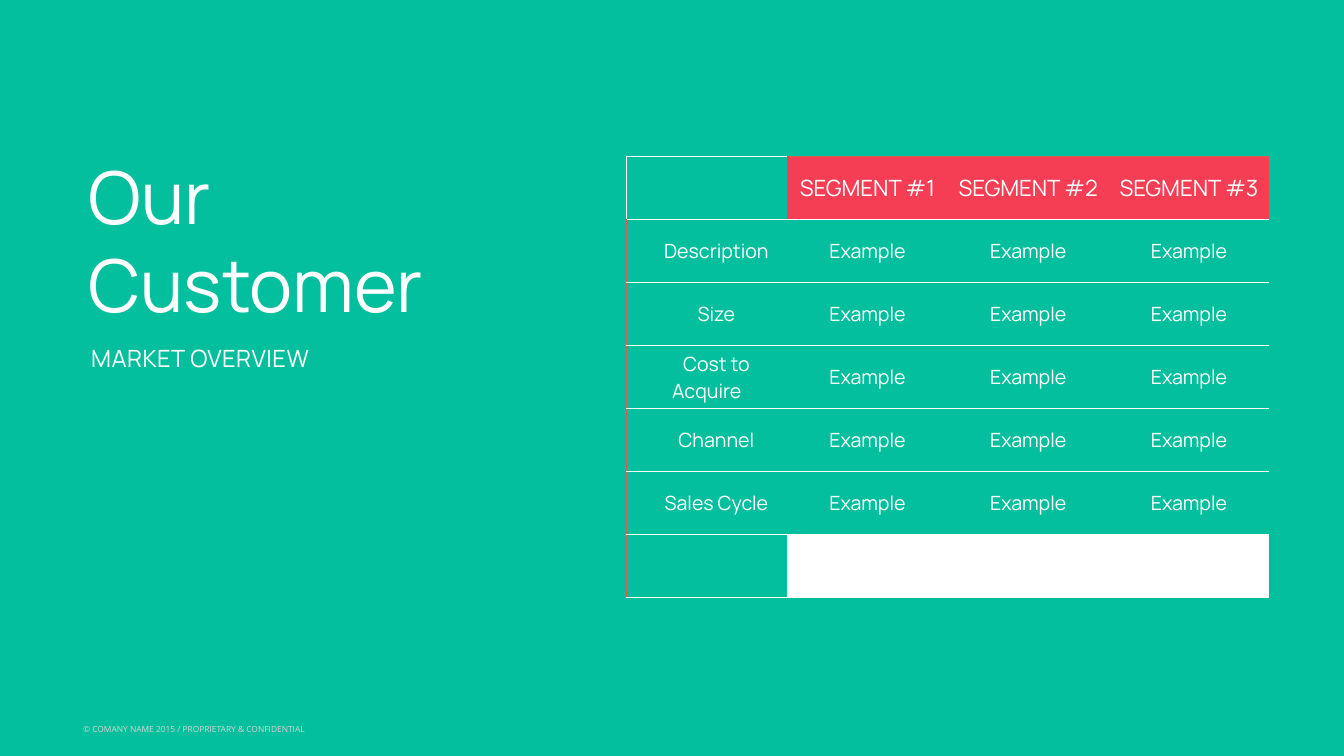
from dataclasses import dataclass

from lxml import etree
from pptx import Presentation
from pptx.dml.color import RGBColor
from pptx.enum.text import MSO_ANCHOR, PP_ALIGN
from pptx.oxml.ns import qn
from pptx.util import Inches, Pt

LEFT, CENTER = PP_ALIGN.LEFT, PP_ALIGN.CENTER
TOP, MIDDLE, BOTTOM = MSO_ANCHOR.TOP, MSO_ANCHOR.MIDDLE, MSO_ANCHOR.BOTTOM

SEGMENTS = ["SEGMENT #1", "SEGMENT #2", "SEGMENT #3"]
TRAITS = ["Description", "Size", "Cost to Acquire", "Channel", "Sales Cycle"]
ROWS = [
    ["", *SEGMENTS],
    *[[trait] + ["Example"] * len(SEGMENTS) for trait in TRAITS],
    [""] * (len(SEGMENTS) + 1),
]


@dataclass(frozen=True)
class Theme:
    background: str = "04BF9D"
    accent: str = "F53E54"
    edge: str = "D95D4F"
    white: str = "FFFFFF"
    muted: str = "D6D6D6"
    font: str = "Manrope"
    footer_font: str = "Open Sans"
    title_size: int = 104
    subtitle_size: int = 34
    header_size: int = 32
    cell_size: int = 28
    footer_size: int = 12


def write_text(frame, text, *, font, size, color, align=LEFT, spacing=0, indent=0):
    paragraph = frame.paragraphs[0]
    paragraph.alignment = align
    if indent:
        properties = paragraph._p.get_or_add_pPr()
        properties.set("marL", "0")
        properties.set("indent", str(Inches(indent)))
    run = paragraph.add_run()
    run.text = text
    run.font.name = font
    run.font.size = Pt(size)
    run.font.color.rgb = RGBColor.from_string(color)
    if spacing:
        run._r.get_or_add_rPr().set("spc", str(round(spacing * 100)))


def set_borders(cell, **borders):
    properties = cell._tc.get_or_add_tcPr()
    for index, side in enumerate(("left", "right", "top", "bottom")):
        color, width = borders.get(side, (None, 0))
        line = etree.Element(qn(f"a:ln{side[0].upper()}"), w=str(Pt(width)))
        if color:
            fill = etree.SubElement(line, qn("a:solidFill"))
            etree.SubElement(fill, qn("a:srgbClr"), val=color)
        else:
            etree.SubElement(line, qn("a:noFill"))
        properties.insert(index, line)


class SlideBuilder:
    """Draw styled elements on the current slide."""

    def __init__(self, slide, theme):
        self.slide = slide
        self.theme = theme

    def background(self):
        fill = self.slide.background.fill
        fill.solid()
        fill.fore_color.rgb = RGBColor.from_string(self.theme.background)

    def text_box(self, text, box, *, inset=0.06, anchor=TOP, wrap=True, **style):
        shape = self.slide.shapes.add_textbox(*map(Inches, box))
        frame = shape.text_frame
        frame.word_wrap = wrap
        frame.vertical_anchor = anchor
        frame.margin_left = frame.margin_right = Inches(inset)
        frame.margin_top = frame.margin_bottom = Inches(inset)
        write_text(frame, text, **style)

    def table(self, rows, left, top, column_width, row_height):
        width, height = column_width * len(rows[0]), row_height * len(rows)
        shape = self.slide.shapes.add_table(
            len(rows), len(rows[0]), *map(Inches, (left, top, width, height)))
        table = shape.table
        table.first_row = table.horz_banding = False
        for column in table.columns:
            column.width = Inches(column_width)
        for row in table.rows:
            row.height = Inches(row_height)
        for row_index, values in enumerate(rows):
            for column_index, value in enumerate(values):
                self.table_cell(table.cell(row_index, column_index), value,
                                header=row_index == 0,
                                footer=row_index == len(rows) - 1,
                                label=column_index == 0)

    def table_cell(self, cell, text, *, header, footer, label):
        theme = self.theme
        cell.vertical_anchor = MIDDLE
        cell.margin_left = cell.margin_right = Inches(0.06)
        cell.margin_top = cell.margin_bottom = Inches(0.06)
        if (header or footer) and not label:
            cell.fill.solid()
            color = theme.accent if header else theme.white
            cell.fill.fore_color.rgb = RGBColor.from_string(color)
        else:
            cell.fill.background()
        thin = (theme.white, 1)
        borders = {"top": thin, "bottom": thin}
        if header and not label:
            borders["top"] = (theme.edge, 1)
        if label:
            borders["left"] = thin if header else (theme.edge, 1)
            if not header:
                borders["top"] = (theme.white, 2)
            if not footer:
                borders["bottom"] = (theme.white, 2)
        set_borders(cell, **borders)
        if text:
            write_text(cell.text_frame, text, font=theme.font, color=theme.white,
                       size=theme.header_size if header else theme.cell_size,
                       align=CENTER, indent=0.38 if label else 0)


def main():
    theme = Theme()
    presentation = Presentation()
    presentation.slide_width = Inches(26.67)
    presentation.slide_height = Inches(15)
    slide = presentation.slides.add_slide(presentation.slide_layouts[6])
    builder = SlideBuilder(slide, theme)
    builder.background()
    builder.text_box("© COMANY NAME 2015 / PROPRIETARY & CONFIDENTIAL",
                     (1.59, 14.3, 4.85, 0.35), wrap=False,
                     font=theme.footer_font, size=theme.footer_size, color=theme.muted)
    builder.text_box("Our Customer", (1.76, 2.18, 8.74, 4.3), inset=0, anchor=BOTTOM,
                     font=theme.font, size=theme.title_size, color=theme.white)
    builder.text_box("MARKET OVERVIEW", (1.75, 6.76, 11.02, 4.85), spacing=0.7,
                     font=theme.font, size=theme.subtitle_size, color=theme.white)
    builder.table(ROWS, left=12.43, top=3.11, column_width=3.19, row_height=1.25)
    presentation.save("out.pptx")


if __name__ == "__main__":
    main()
